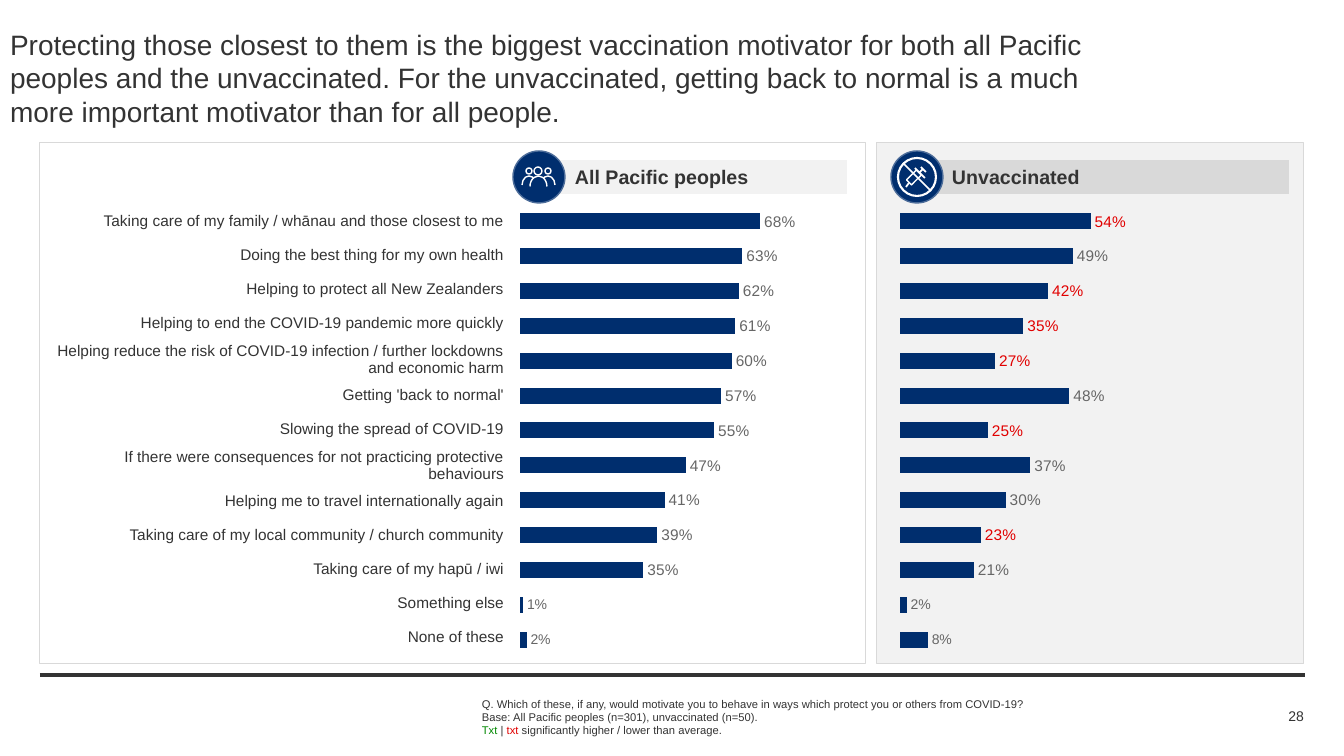
from lxml import etree
from pptx import Presentation
from pptx.chart.data import CategoryChartData
from pptx.dml.color import RGBColor
from pptx.enum.chart import XL_CHART_TYPE, XL_LABEL_POSITION
from pptx.enum.shapes import MSO_CONNECTOR, MSO_SHAPE
from pptx.enum.text import MSO_ANCHOR, PP_ALIGN
from pptx.oxml import parse_xml
from pptx.oxml.ns import nsdecls, qn
from pptx.util import Pt

NAVY = RGBColor(0x00, 0x2E, 0x6E)
STEEL = RGBColor(0x4C, 0x6C, 0x99)
DARK = RGBColor(0x33, 0x33, 0x33)
GREY = RGBColor(0x66, 0x66, 0x66)
SILVER = RGBColor(0xD9, 0xD9, 0xD9)
PALE = RGBColor(0xF2, 0xF2, 0xF2)
WHITE = RGBColor(0xFF, 0xFF, 0xFF)
GREEN = RGBColor(0x00, 0x88, 0x00)
RED = RGBColor(0xE1, 0x00, 0x00)

TITLE = ("Protecting those closest to them is the biggest vaccination motivator for both all Pacific "
         "peoples and the unvaccinated. For the unvaccinated, getting back to normal is a much more "
         "important motivator than for all people.")
MOTIVATORS = [
    ("Taking care of my family / whānau and those closest to me", 0.68, 0.54),
    ("Doing the best thing for my own health", 0.63, 0.49),
    ("Helping to protect all New Zealanders", 0.62, 0.42),
    ("Helping to end the COVID-19 pandemic more quickly", 0.61, 0.35),
    ("Helping reduce the risk of COVID-19 infection / further lockdowns and economic harm", 0.60, 0.27),
    ("Getting 'back to normal'", 0.57, 0.48),
    ("Slowing the spread of COVID-19", 0.55, 0.25),
    ("If there were consequences for not practicing protective behaviours", 0.47, 0.37),
    ("Helping me to travel internationally again", 0.41, 0.30),
    ("Taking care of my local community / church community", 0.39, 0.23),
    ("Taking care of my hapū / iwi", 0.35, 0.21),
    ("Something else", 0.01, 0.02),
    ("None of these", 0.02, 0.08),
]
LABELS, ALL_PEOPLES, UNVACCINATED = zip(*MOTIVATORS)
SIGNIFICANTLY_LOWER = {0, 2, 3, 4, 6, 9}
LARGE_LABELS = 11
TWO_LINE_ROWS = {4, 7}
FOOTNOTE = [
    [("Q. Which of these, if any, would motivate you to behave in ways which protect you or others "
      "from COVID-19?", DARK)],
    [("Base: All Pacific peoples (n=301), unvaccinated (n=50).", DARK)],
    [("Txt", GREEN), (" | ", DARK), ("txt", RED), (" significantly higher / lower than average.", DARK)],
]


class SlideBuilder:
    """Draws styled elements on the current slide, with lengths in px."""

    scale = 914400 / 100.8
    font_name = "Arial"

    def __init__(self, presentation):
        presentation.slide_width, presentation.slide_height = self.emu(1344, 756)
        self.slide = presentation.slides.add_slide(presentation.slide_layouts[5])
        self.shapes = self.slide.shapes

    def emu(self, *lengths):
        return [round(length * self.scale) for length in lengths]

    def style(self, font, size, color, bold=False):
        font.name, font.size, font.bold = self.font_name, Pt(size), bold
        font.color.rgb = color

    def frame(self, text_frame, inset=True, wrap=True, anchor=MSO_ANCHOR.TOP):
        text_frame.word_wrap = wrap
        text_frame.vertical_anchor = anchor
        if not inset:
            text_frame.margin_left = text_frame.margin_right = 0
            text_frame.margin_top = text_frame.margin_bottom = 0

    def title(self, box, text):
        title = self.shapes.title
        title.left, title.top, title.width, title.height = self.emu(*box)
        title.text_frame.text = text
        self.frame(title.text_frame, inset=False)
        paragraph = title.text_frame.paragraphs[0]
        paragraph.alignment = PP_ALIGN.LEFT
        self.style(paragraph.font, 20, DARK)

    def text(self, box, lines, size, bold=False, align=PP_ALIGN.LEFT, **frame):
        text_frame = self.shapes.add_textbox(*self.emu(*box)).text_frame
        self.frame(text_frame, **frame)
        for index, runs in enumerate(lines):
            paragraph = text_frame.paragraphs[0] if index == 0 else text_frame.add_paragraph()
            paragraph.alignment = align
            self.style(paragraph.font, size, DARK, bold)
            for content, color in runs:
                run = paragraph.add_run()
                run.text = content
                run.font.color.rgb = color

    def shape(self, kind, box, fill=None, line=None, weight=1.0, angles=(), rotation=0):
        shape = self.shapes.add_shape(kind, *self.emu(*box))
        shape.shadow.inherit = False
        shape.rotation = rotation
        for index, angle in enumerate(angles):
            shape.adjustments[index] = angle * 0.6
        if fill is None:
            shape.fill.background()
        else:
            shape.fill.solid()
            shape.fill.fore_color.rgb = fill
        if line is None:
            shape.line.fill.background()
        else:
            shape.line.color.rgb = line
            shape.line.width = Pt(weight)

    def line(self, ends, color, weight):
        connector = self.shapes.add_connector(MSO_CONNECTOR.STRAIGHT, *self.emu(*ends))
        connector.line.color.rgb = color
        connector.line.width = Pt(weight)
        etree.SubElement(connector._element.spPr, qn("a:effectLst"))

    def label_table(self, left, top, width, labels):
        heights = [38 if row in TWO_LINE_ROWS else 34 for row in range(len(labels))]
        table = self.shapes.add_table(
            len(labels), 1, *self.emu(left, top, width, sum(heights))).table
        table.first_row = table.horz_banding = False
        for row, (label, height) in enumerate(zip(labels, heights)):
            table.rows[row].height = self.emu(height)[0]
            cell = table.cell(row, 0)
            cell.fill.background()
            cell.vertical_anchor = MSO_ANCHOR.MIDDLE
            cell.margin_left, cell.margin_right, cell.margin_top, cell.margin_bottom = self.emu(1, 1, 1, 0)
            cell.text = label
            paragraph = cell.text_frame.paragraphs[0]
            paragraph.alignment = PP_ALIGN.RIGHT
            self.style(paragraph.font, 11, DARK)

    def bar_chart(self, box, values, highlighted=()):
        data = CategoryChartData(number_format="0%")
        data.categories = [str(number) for number in range(1, len(values) + 1)]
        data.add_series("Series 1", values)
        chart = self.shapes.add_chart(XL_CHART_TYPE.BAR_CLUSTERED, *self.emu(*box), data).chart
        chart.has_legend = chart.has_title = False
        self.style(chart.font, 10, DARK)
        chart.category_axis.reverse_order = True
        chart.category_axis.visible = False
        axis = chart.value_axis
        axis.minimum_scale, axis.maximum_scale = 0, 1.5
        axis.has_major_gridlines = False
        axis.visible = False
        plot = chart.plots[0]
        plot.gap_width = 116
        plot.vary_by_categories = False
        series = plot.series[0]
        series.format.fill.solid()
        series.format.fill.fore_color.rgb = NAVY
        labels = series.data_labels
        labels.show_value = True
        labels.number_format, labels.number_format_is_linked = "0%", False
        labels.position = XL_LABEL_POSITION.OUTSIDE_END
        self.style(labels.font, 10, GREY)
        for index in range(LARGE_LABELS):
            label = series.points[index].data_label
            self.style(label.font, 11, RED if index in highlighted else GREY)
            label.position = XL_LABEL_POSITION.OUTSIDE_END
        self.plot_layout(chart, x=0.47, y=0.04, w=0.5, h=0.91)

    def plot_layout(self, chart, **fractions):
        plot_area = chart._chartSpace.chart.plotArea
        for layout in plot_area.findall(qn("c:layout")):
            plot_area.remove(layout)
        sizes = "".join(f'<c:{name} val="{value}"/>' for name, value in fractions.items())
        plot_area.insert(0, parse_xml(
            f'<c:layout {nsdecls("c")}><c:manualLayout><c:layoutTarget val="inner"/>'
            f'<c:xMode val="edge"/><c:yMode val="edge"/>{sizes}</c:manualLayout></c:layout>'))

    def people_icon(self):
        for head in ((534, 167, 8, 8), (526, 168, 6, 6), (545, 168, 6, 6)):
            self.shape(MSO_SHAPE.OVAL, head, line=WHITE)
        for shoulders, angles in (((530, 176, 17, 21), (180, 0)),
                                  ((522, 176, 14, 18), (180, 300)),
                                  ((541, 176, 14, 18), (240, 0))):
            self.shape(MSO_SHAPE.ARC, shoulders, line=WHITE, angles=angles)

    def no_syringe_icon(self):
        self.shape(MSO_SHAPE.OVAL, (898, 158, 38, 38), line=WHITE, weight=1.5)
        self.shape(MSO_SHAPE.RECTANGLE, (907, 174, 14, 7), line=WHITE, rotation=-45)
        for stroke in ((906, 187, 909, 183), (919, 173, 923, 169), (921, 167, 926, 172),
                       (915, 168, 925, 178), (903, 163, 931, 191)):
            self.line(stroke, WHITE, 1.25)


def main():
    presentation = Presentation()
    builder = SlideBuilder(presentation)
    builder.title((10, 27, 1124, 44), TITLE)
    builder.line((40, 675, 1305, 675), DARK, 3)
    builder.text((472, 692, 754, 50), FOOTNOTE, 8)
    builder.shape(MSO_SHAPE.RECTANGLE, (877, 143, 427, 521), PALE, SILVER, 0.75)
    builder.shape(MSO_SHAPE.RECTANGLE, (902, 160, 387, 34), SILVER)
    builder.shape(MSO_SHAPE.RECTANGLE, (531, 160, 316, 34), PALE)
    for left in (513, 891):
        builder.shape(MSO_SHAPE.OVAL, (left, 151, 52, 52), NAVY, STEEL)
    builder.bar_chart((21, 184, 1061, 498), ALL_PEOPLES)
    builder.shape(MSO_SHAPE.RECTANGLE, (40, 143, 826, 521), line=SILVER, weight=0.75)
    builder.label_table(54, 204, 451, LABELS)
    builder.bar_chart((401, 184, 1061, 498), UNVACCINATED, SIGNIFICANTLY_LOWER)
    for left, width, heading in ((575, 174, "All Pacific peoples"), (952, 128, "Unvaccinated")):
        builder.text((left, 165, width, 24), [[(heading, DARK)]], 14, bold=True, inset=False, wrap=False)
    builder.people_icon()
    builder.no_syringe_icon()
    builder.text((1197, 705, 107, 22), [[("28", DARK)]], 10, align=PP_ALIGN.RIGHT,
                 inset=False, anchor=MSO_ANCHOR.MIDDLE)
    presentation.save("out.pptx")


if __name__ == "__main__":
    main()
